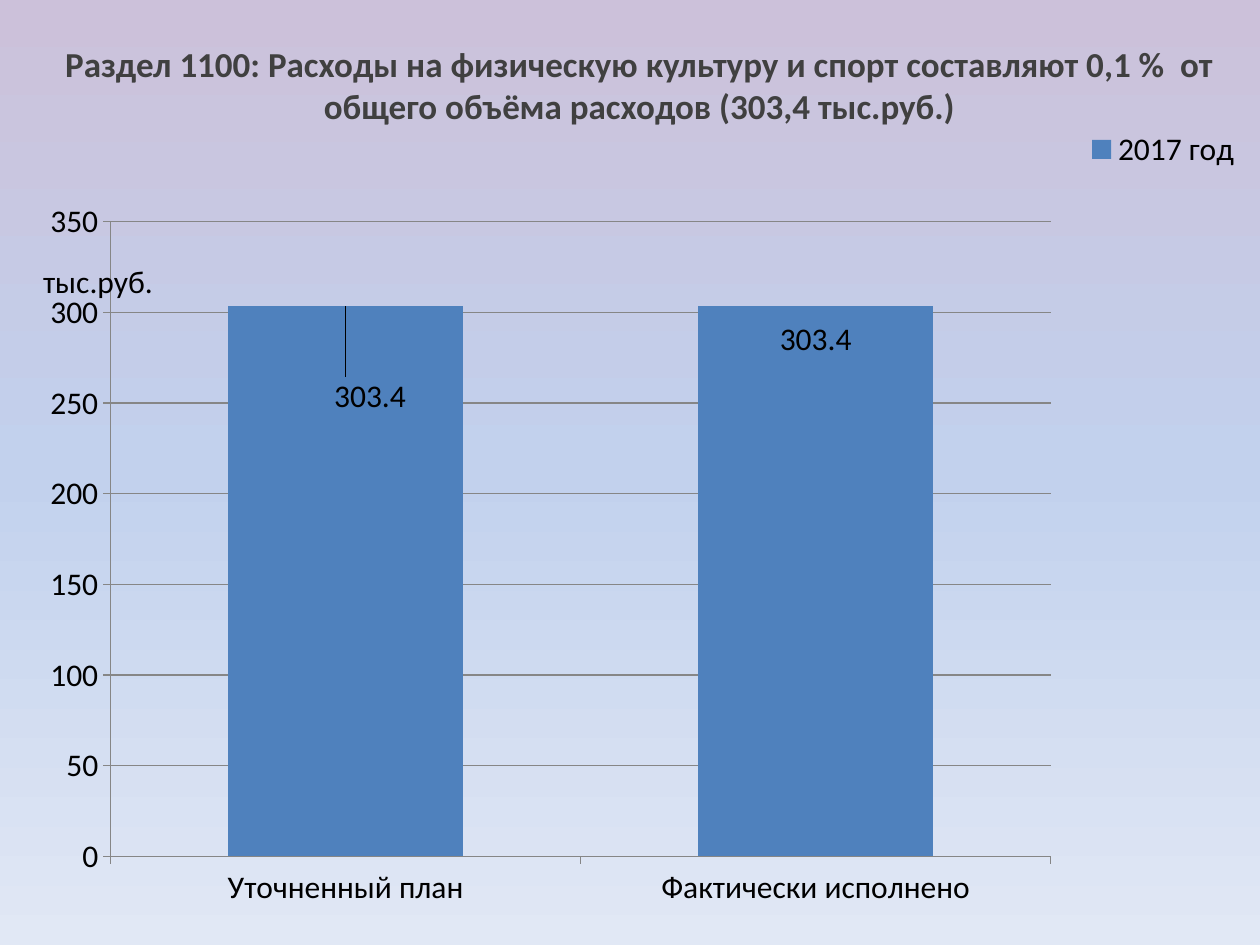
"""Build the slide on sports spending with its column chart."""
import pptx
import pptx.chart.data
import pptx.dml.color
import pptx.enum.chart
import pptx.enum.text
import pptx.oxml
import pptx.oxml.ns
import pptx.util

Pt = pptx.util.Pt
RGB = pptx.dml.color.RGBColor
enum = pptx.enum.chart
BLACK = RGB(0, 0, 0)
DARK = RGB(0x40, 0x40, 0x40)
GRAY = RGB(0x86, 0x86, 0x86)
BLUE = RGB(0x4F, 0x81, 0xBD)
SKY = [(0, RGB(0xCC, 0xC1, 0xDA)), (50, RGB(0xC2, 0xD1, 0xED)), (100, RGB(0xE1, 0xE8, 0xF5))]


def style(item, form):
    for name, value in form.items():
        setattr(item, name, value)


def place(node, spot, **sizes):
    for old in node.findall(pptx.oxml.ns.qn("c:layout")):
        node.remove(old)
    parts = "".join(f'<c:{name} val="{value}"/>' for name, value in sizes.items())
    node.insert(spot, pptx.oxml.parse_xml(
        f'<c:layout {pptx.oxml.ns.nsdecls("c")}><c:manualLayout>{parts}</c:manualLayout></c:layout>'))


deck = pptx.Presentation()
style(deck, {"slide_width": Pt(720), "slide_height": Pt(540)})
slide = deck.slides.add_slide(deck.slide_layouts[6])

stops = "".join(f'<a:gs pos="{pos * 1000}"><a:srgbClr val="{tint}"/></a:gs>' for pos, tint in SKY)
slide.element.cSld.insert(0, pptx.oxml.parse_xml(
    f'<p:bg {pptx.oxml.ns.nsdecls("p", "a")}><p:bgPr><a:gradFill rotWithShape="1">'
    f'<a:gsLst>{stops}</a:gsLst><a:lin ang="5400000" scaled="0"/></a:gradFill>'
    '<a:effectLst/></p:bgPr></p:bg>'))

head = slide.shapes.add_textbox(Pt(25.2), Pt(20.9), Pt(680.4), Pt(39.6)).text_frame
head.word_wrap = True
para = head.paragraphs[0]
style(para, {"alignment": pptx.enum.text.PP_ALIGN.CENTER, "space_before": Pt(4)})
run = para.add_run()
run.text = ("Раздел 1100: Расходы на физическую культуру и спорт составляют 0,1 %  от "
            "общего объёма расходов (303,4 тыс.руб.)")
style(run.font, {"name": "Calibri", "size": Pt(20), "bold": True})
run.font.color.rgb = DARK

data = pptx.chart.data.CategoryChartData()
data.categories = ["Уточненный план", "Фактически исполнено"]
data.add_series("2017 год", [303.4, 303.4])
chart = slide.shapes.add_chart(
    enum.XL_CHART_TYPE.COLUMN_CLUSTERED, Pt(14.4), Pt(66.2), Pt(697.7), Pt(465.1), data).chart
base = {"name": "Calibri", "size": Pt(18), "bold": False}
style(chart.font, base)
chart.font.color.rgb = BLACK

chart.has_title = True
title = chart.chart_title
title.text_frame.text = "тыс.руб."
font = title.text_frame.paragraphs[0].runs[0].font
style(font, base)
font.color.rgb = BLACK

chart.has_legend = True
style(chart.legend, {"position": enum.XL_LEGEND_POSITION.CORNER, "include_in_layout": False})

grid = chart.value_axis
style(grid, {"minimum_scale": 0, "maximum_scale": 350, "major_unit": 50, "has_major_gridlines": True})
for axis in (grid, chart.category_axis):
    axis.major_tick_mark = enum.XL_TICK_MARK.OUTSIDE
for line in (grid.format.line, chart.category_axis.format.line, grid.major_gridlines.format.line):
    line.color.rgb = GRAY
    line.width = Pt(0.75)

plot = chart.plots[0]
style(plot, {"gap_width": 100, "vary_by_categories": False})
bars = plot.series[0]
bars.format.fill.solid()
bars.format.fill.fore_color.rgb = BLUE
style(bars.data_labels, {"show_value": True, "position": enum.XL_LABEL_POSITION.OUTSIDE_END})
for spot in range(2):
    bars.points[spot].data_label.position = enum.XL_LABEL_POSITION.OUTSIDE_END
for node, (x, y) in zip(bars.data_labels._element.findall(pptx.oxml.ns.qn("c:dLbl")),
                        [(0.02, 0.14), (0, 0.07)]):
    place(node, 1, x=x, y=y)

edge = {"xMode": "edge", "yMode": "edge"}
place(title._element, 1, **edge, x=0.01, y=0.17)
place(chart.legend._element, 1, **edge, x=0.87, y=0.01)
place(chart._chartSpace.chart.plotArea, 0, layoutTarget="inner", **edge, x=0.07, y=0.13, w=0.77, h=0.78)

deck.save("out.pptx")
